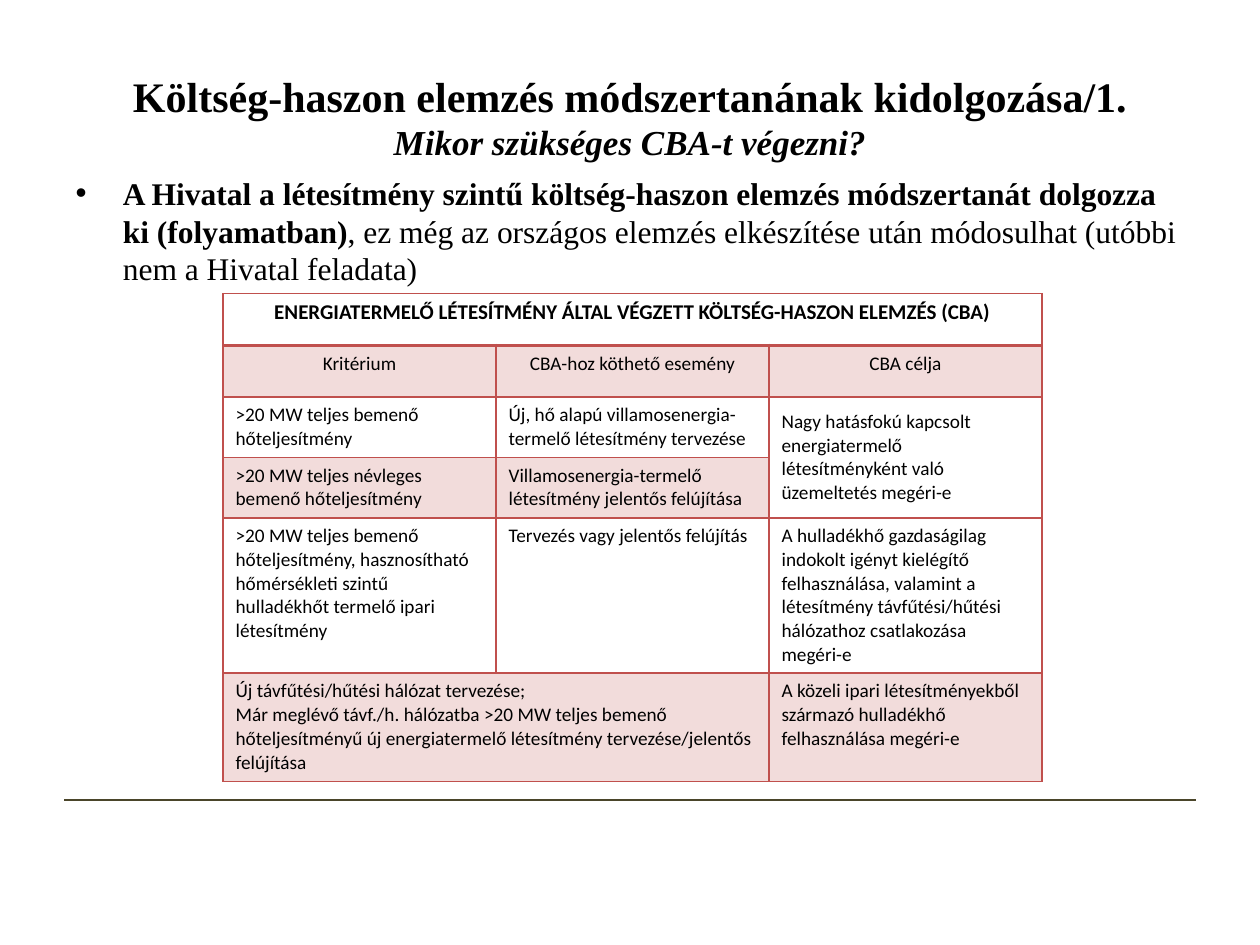
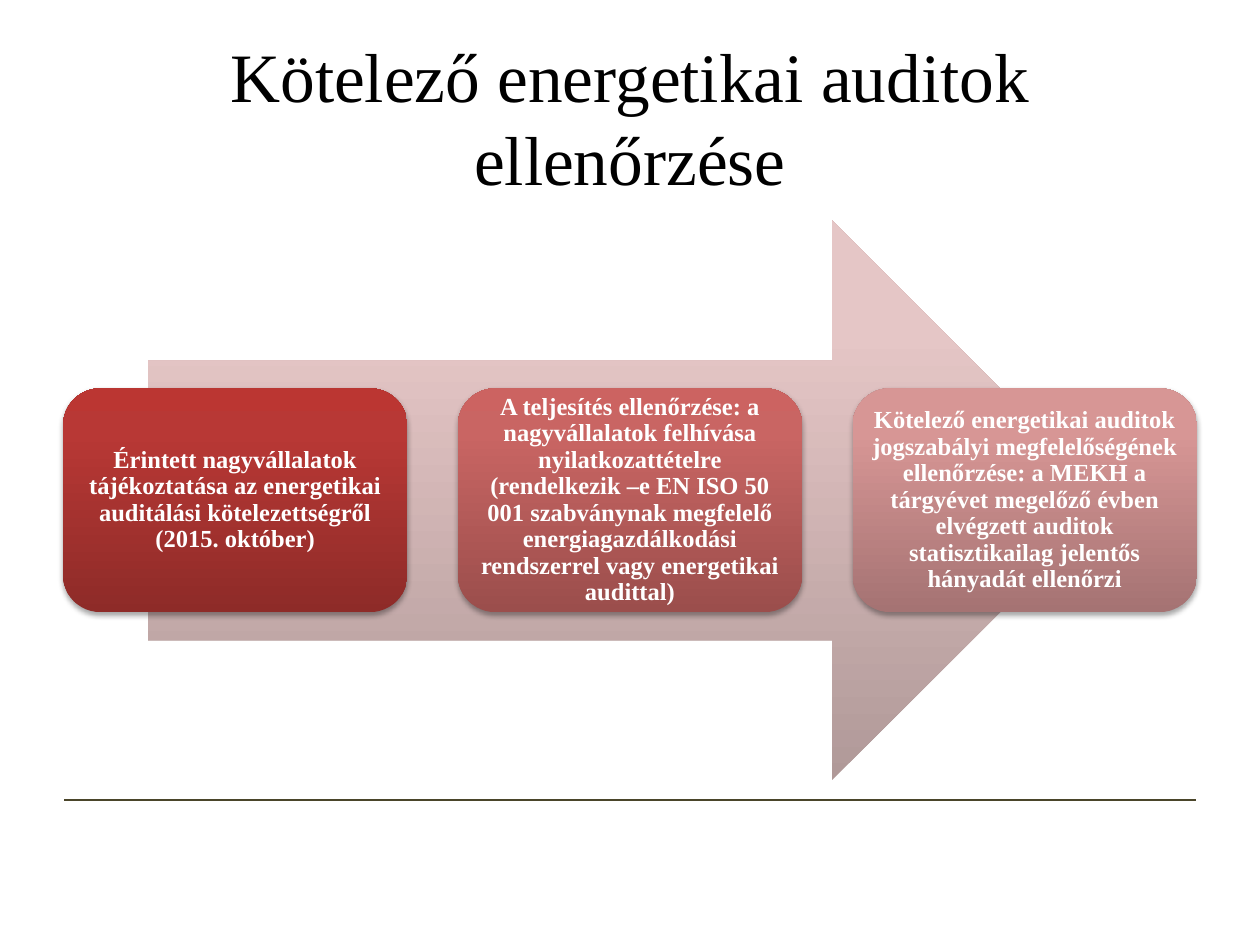
from collections import namedtuple

from lxml.etree import SubElement
from pptx import Presentation
from pptx.dml.color import RGBColor
from pptx.enum.shapes import MSO_CONNECTOR, MSO_SHAPE
from pptx.enum.text import MSO_ANCHOR, MSO_AUTO_SIZE, PP_ALIGN
from pptx.oxml.ns import qn
from pptx.util import Inches, Pt

Box = namedtuple("Box", "left top width height")

SLIDE_W, SLIDE_H = 10, 7.5
TITLE_BOX = Box(0.5, 0.3, 9, 1.25)
BODY_BOX = Box(0.5, 1.33, 9, 0.97)
TABLE_BOX = Box(1.77, 2.33, 6.5, 3.87)
PROCESS_BOX = Box(0.5, 1.75, 9, 4.44)
FOOTER_Y = 6.35

SERIF, SANS = "Times New Roman", "Calibri"
BLACK, WHITE = "000000", "FFFFFF"
RED, PALE_RED, FOOTER_BROWN = "C0504D", "F2DCDB", "4A452A"

ROW_HEIGHTS = [0.41, 0.41, 0.48, 0.48, 1.23, 0.86]
SHADED_ROWS = {1, 3, 5}
MERGES = [((0, 0), (0, 2)), ((2, 2), (3, 2)), ((5, 0), (5, 1))]
CRITERIA = [
    ["ENERGIATERMELŐ LÉTESÍTMÉNY ÁLTAL VÉGZETT KÖLTSÉG-HASZON ELEMZÉS (CBA)", "", ""],
    ["Kritérium", "CBA-hoz köthető esemény", "CBA célja"],
    [">20 MW teljes bemenő hőteljesítmény",
     "Új, hő alapú villamosenergia-termelő létesítmény tervezése",
     "Nagy hatásfokú kapcsolt energiatermelő létesítményként való üzemeltetés megéri-e"],
    [">20 MW teljes névleges bemenő hőteljesítmény",
     "Villamosenergia-termelő létesítmény jelentős felújítása", ""],
    [">20 MW teljes bemenő hőteljesítmény, hasznosítható hőmérsékleti szintű "
     "hulladékhőt termelő ipari létesítmény",
     "Tervezés vagy jelentős felújítás",
     "A hulladékhő gazdaságilag indokolt igényt kielégítő felhasználása, valamint a "
     "létesítmény távfűtési/hűtési hálózathoz csatlakozása megéri-e"],
    ["Új távfűtési/hűtési hálózat tervezése;\n"
     "Már meglévő távf./h. hálózatba >20 MW teljes bemenő hőteljesítményű új "
     "energiatermelő létesítmény tervezése/jelentős felújítása", "",
     "A közeli ipari létesítményekből származó hulladékhő felhasználása megéri-e"],
]

# Gradient colours run from the bottom edge to the top edge.
GRADIENT_STOPS = (0, 80, 100)
ARROW_COLORS = ("B09998", "E5C6C6", "E6C7C6")
AUDIT_STEPS = [
    ("Érintett nagyvállalatok tájékoztatása az energetikai auditálási "
     "kötelezettségről (2015. október)",
     ("8E2B28", "B83835", "BB3632")),
    ("A teljesítés ellenőrzése: a nagyvállalatok felhívása nyilatkozattételre "
     "(rendelkezik –e EN ISO 50 001 szabványnak megfelelő energiagazdálkodási "
     "rendszerrel vagy energetikai audittal)",
     ("9B4E4C", "C96563", "CC6361")),
    ("Kötelező energetikai auditok jogszabályi megfelelőségének ellenőrzése: a MEKH a "
     "tárgyévet megelőző évben elvégzett auditok statisztikailag jelentős hányadát ellenőrzi",
     ("A57373", "D79695", "D99594")),
]


def rgb(color):
    return RGBColor.from_string(color)


def inches(box):
    return [Inches(length) for length in box]


def part_of(box, left, top, width, height):
    """Return the part of a box given by shares of its width and height."""
    return Box(box.left + left * box.width, box.top + top * box.height,
               width * box.width, height * box.height)


def set_font(font, size, name=SERIF, color=BLACK, bold=False):
    font.size, font.name, font.bold = Pt(size), name, bold
    font.color.rgb = rgb(color)


def add_color(parent, color):
    return SubElement(parent, qn("a:srgbClr"), val=color)


def place(placeholder, box):
    placeholder.left, placeholder.top, placeholder.width, placeholder.height = inches(box)
    frame = placeholder.text_frame
    frame.word_wrap = True
    frame.auto_size = MSO_AUTO_SIZE.NONE
    return frame


def add_footer_line(slide):
    line = slide.shapes.add_connector(
        MSO_CONNECTOR.STRAIGHT, Inches(0.51), Inches(FOOTER_Y),
        Inches(SLIDE_W - 0.51), Inches(FOOTER_Y))
    line.line.color.rgb = rgb(FOOTER_BROWN)
    line.line.width = Pt(0.75)
    SubElement(line._element.spPr, qn("a:effectLst"))


def add_titled_slide(deck, layout, title, size, bold=False, subtitle=None):
    slide = deck.slides.add_slide(deck.slide_layouts[layout])
    add_footer_line(slide)
    frame = place(slide.shapes.title, TITLE_BOX)
    frame.vertical_anchor = MSO_ANCHOR.MIDDLE
    heading = frame.paragraphs[0]
    heading.alignment = PP_ALIGN.CENTER
    set_font(heading.font, size, bold=bold)
    heading.add_run().text = title
    if subtitle:
        heading.add_line_break()
        question = heading.add_run()
        question.text = subtitle
        question.font.size, question.font.italic = Pt(20), True
    return slide


def fill_body(slide, box, emphasis, rest):
    bullet = place(slide.placeholders[1], box).paragraphs[0]
    bullet.space_before = Pt(0)
    set_font(bullet.font, 18)
    strong = bullet.add_run()
    strong.text, strong.font.bold = emphasis, True
    bullet.add_run().text = rest


def add_borders(cell, row):
    """Draw red cell borders, doubled between the heading row and the rest."""
    widths = {"L": 1, "R": 1, "T": 2 if row == 1 else 1, "B": 2 if row == 0 else 1}
    properties = cell._tc.get_or_add_tcPr()
    for side, width in widths.items():
        border = SubElement(properties, qn(f"a:ln{side}"), w=str(Pt(width)))
        add_color(SubElement(border, qn("a:solidFill")), RED)


def add_criteria_table(slide, box):
    columns = len(CRITERIA[0])
    table = slide.shapes.add_table(len(CRITERIA), columns, *inches(box)).table
    table.first_row = table.horz_banding = False
    for column in table.columns:
        column.width = Inches(box.width / columns)
    for r, texts in enumerate(CRITERIA):
        table.rows[r].height = Inches(ROW_HEIGHTS[r])
        for c, text in enumerate(texts):
            cell = table.cell(r, c)
            add_borders(cell, r)
            if r in SHADED_ROWS and (r, c) != (3, 2):
                cell.fill.solid()
                cell.fill.fore_color.rgb = rgb(PALE_RED)
            else:
                cell.fill.background()
            cell.text = text
            for paragraph in cell.text_frame.paragraphs:
                set_font(paragraph.font, 12 if r == 0 else 11, SANS, bold=r == 0)
                paragraph.alignment = PP_ALIGN.CENTER if r < 2 else PP_ALIGN.LEFT
    for first, last in MERGES:
        table.cell(*first).merge(table.cell(*last))
    table.cell(2, 2).vertical_anchor = MSO_ANCHOR.MIDDLE


def add_gradient_shape(slide, kind, box, colors):
    shape = slide.shapes.add_shape(kind, *inches(box))
    shape.shadow.inherit = False
    shape.line.fill.background()
    shape.fill.gradient()
    shape.fill.gradient_angle = 90
    stops = shape._element.spPr.find(qn("a:gradFill")).find(qn("a:gsLst"))
    stops.clear()
    for position, color in zip(GRADIENT_STOPS, colors):
        add_color(SubElement(stops, qn("a:gs"), pos=str(position * 1000)), color)
    return shape


def add_soft_shadow(shape):
    effects = shape._element.spPr.find(qn("a:effectLst"))
    shadow = SubElement(effects, qn("a:outerShdw"), blurRad=str(Pt(3.1)),
                        dist=str(Pt(1.8)), dir="5400000", rotWithShape="0")
    SubElement(add_color(shadow, BLACK), qn("a:alpha"), val="35000")


def add_step(slide, box, text, colors):
    step = add_gradient_shape(slide, MSO_SHAPE.ROUNDED_RECTANGLE, box, colors)
    add_soft_shadow(step)
    frame = step.text_frame
    frame.word_wrap = True
    frame.vertical_anchor = MSO_ANCHOR.MIDDLE
    frame.margin_left = frame.margin_right = Inches(0.06)
    frame.margin_top = frame.margin_bottom = Inches(0.06)
    frame.text = text
    paragraph = frame.paragraphs[0]
    paragraph.alignment = PP_ALIGN.CENTER
    paragraph.line_spacing = 0.9
    set_font(paragraph.font, 14, color=WHITE, bold=True)


def add_audit_process(slide, box):
    add_gradient_shape(slide, MSO_SHAPE.RIGHT_ARROW,
                       part_of(box, 0.075, 0, 0.85, 1), ARROW_COLORS)
    gap = 0.4 / box.width
    width = (1 - gap * (len(AUDIT_STEPS) - 1)) / len(AUDIT_STEPS)
    for i, (text, colors) in enumerate(AUDIT_STEPS):
        add_step(slide, part_of(box, i * (width + gap), 0.3, width, 0.4), text, colors)


def main():
    deck = Presentation()
    deck.slide_width, deck.slide_height = Inches(SLIDE_W), Inches(SLIDE_H)

    method = add_titled_slide(
        deck, 1, "Költség-haszon elemzés módszertanának kidolgozása/1.", 24,
        bold=True, subtitle="Mikor szükséges CBA-t végezni?")
    fill_body(method, BODY_BOX,
              "A Hivatal a létesítmény szintű költség-haszon elemzés módszertanát "
              "dolgozza ki (folyamatban)",
              ", ez még az országos elemzés elkészítése után módosulhat "
              "(utóbbi nem a Hivatal feladata)")
    add_criteria_table(method, TABLE_BOX)

    audits = add_titled_slide(deck, 5, "Kötelező energetikai auditok ellenőrzése", 39.6)
    add_audit_process(audits, PROCESS_BOX)

    deck.save("out.pptx")


if __name__ == "__main__":
    main()
